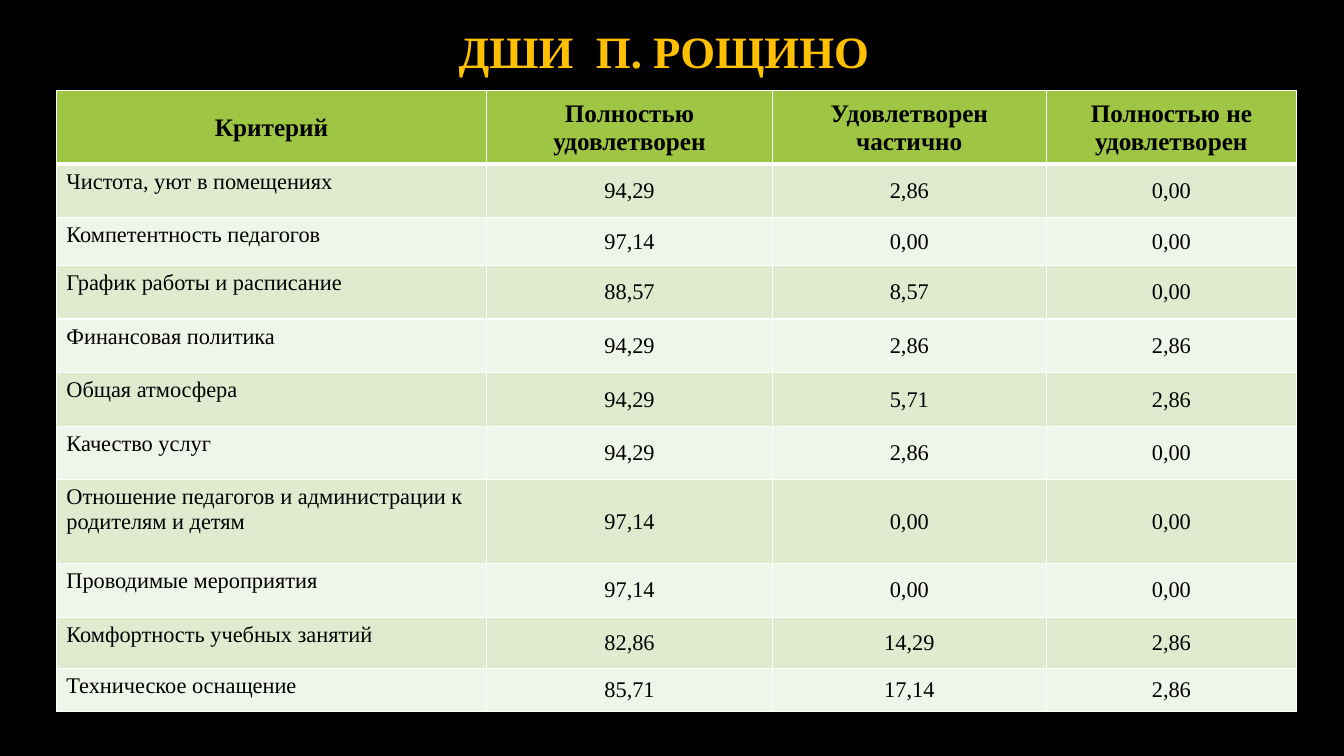
from lxml import etree
from pptx import Presentation
from pptx.dml.color import RGBColor
from pptx.enum.text import MSO_ANCHOR, MSO_AUTO_SIZE, PP_ALIGN
from pptx.oxml.ns import qn
from pptx.util import Cm, Pt

LEFT, CENTER = PP_ALIGN.LEFT, PP_ALIGN.CENTER
TOP, MIDDLE = MSO_ANCHOR.TOP, MSO_ANCHOR.MIDDLE
NO_FIT = MSO_AUTO_SIZE.NONE

COLORS = {
    "back": "000000",
    "title": "FFC000",
    "text": "000000",
    "head": "9EC544",
    "odd": "DFEACF",
    "even": "F0F5E9",
    "line": "FFFFFF",
}
FACE = "Times New Roman"
FONTS = {
    "title": {"name": FACE, "size": Pt(32), "bold": True},
    "head": {"name": FACE, "size": Pt(18), "bold": True},
    "body": {"name": FACE, "size": Pt(16), "bold": False},
}

TITLE = "ДШИ  П. РОЩИНО"
HEADS = ["Критерий", "Полностью удовлетворен",
         "Удовлетворен частично", "Полностью не удовлетворен"]
# Each criterion: row height in cm, name, three shares
ROWS = [
    (1.35, "Чистота, уют в помещениях", "94,29", "2,86", "0,00"),
    (1.2, "Компетентность педагогов", "97,14", "0,00", "0,00"),
    (1.35, "График работы и расписание", "88,57", "8,57", "0,00"),
    (1.35, "Финансовая политика", "94,29", "2,86", "2,86"),
    (1.35, "Общая атмосфера", "94,29", "5,71", "2,86"),
    (1.35, "Качество услуг", "94,29", "2,86", "0,00"),
    (2.11, "Отношение педагогов и администрации к родителям и детям",
     "97,14", "0,00", "0,00"),
    (1.35, "Проводимые мероприятия", "97,14", "0,00", "0,00"),
    (1.3, "Комфортность учебных занятий", "82,86", "14,29", "2,86"),
    (1.07, "Техническое оснащение", "85,71", "17,14", "2,86"),
]
HEAD_ROW = 1.85
WIDTHS = [10.85, 7.19, 6.91, 6.3]


def color(key):
    return RGBColor.from_string(COLORS[key])


def write(frame, text, font, ink, align):
    """Put one formatted paragraph into a text frame."""
    frame.text = text
    para = frame.paragraphs[0]
    para.alignment = align
    run = para.runs[0]
    for name, value in FONTS[font].items():
        setattr(run.font, name, value)
    run.font.color.rgb = color(ink)
    return para


def edge(cell, side, width):
    """Draw one border of a cell."""
    line = etree.SubElement(cell._tc.get_or_add_tcPr(), qn(f"a:{side}"),
                            w=str(Pt(width)))
    fill = etree.SubElement(line, qn("a:solidFill"))
    etree.SubElement(fill, qn("a:srgbClr"), val=COLORS["line"])


def add_title(slide):
    title = slide.shapes.title
    place = {"left": Cm(2.36), "top": Cm(0.43),
             "width": Cm(28.75), "height": Cm(1.85)}
    for name, value in place.items():
        setattr(title, name, value)
    frame = title.text_frame
    frame.auto_size = NO_FIT
    frame.vertical_anchor = MIDDLE
    para = write(frame, TITLE, "title", "title", CENTER)
    para.line_spacing = 0.9


def fill_cell(cell, text, row, col):
    head = row == 0
    name = col == 0 and not head
    # Heavier rule between the header and the first criterion
    for side in ("lnL", "lnR", "lnT", "lnB"):
        heavy = (row, side) in ((0, "lnB"), (1, "lnT"))
        edge(cell, side, 3 if heavy else 1)
    cell.fill.solid()
    cell.fill.fore_color.rgb = color(
        "head" if head else "odd" if row % 2 else "even")
    cell.vertical_anchor = TOP if name else MIDDLE
    write(cell.text_frame, text, "head" if head else "body", "text",
          LEFT if name else CENTER)


def add_grid(slide):
    lines = [(HEAD_ROW, *HEADS), *ROWS]
    high = sum(line[0] for line in lines)
    table = slide.shapes.add_table(
        len(lines), len(WIDTHS), Cm(1.42), Cm(2.29),
        Cm(sum(WIDTHS)), Cm(high)).table
    for col, width in zip(table.columns, WIDTHS):
        col.width = Cm(width)
    for row, (height, *texts) in enumerate(lines):
        table.rows[row].height = Cm(height)
        for col, text in enumerate(texts):
            fill_cell(table.cell(row, col), text, row, col)


def main():
    deck = Presentation()
    deck.slide_width, deck.slide_height = Cm(33.87), Cm(19.05)
    slide = deck.slides.add_slide(deck.slide_layouts[5])
    slide.background.fill.solid()
    slide.background.fill.fore_color.rgb = color("back")
    add_title(slide)
    add_grid(slide)
    deck.save("out.pptx")


if __name__ == "__main__":
    main()
